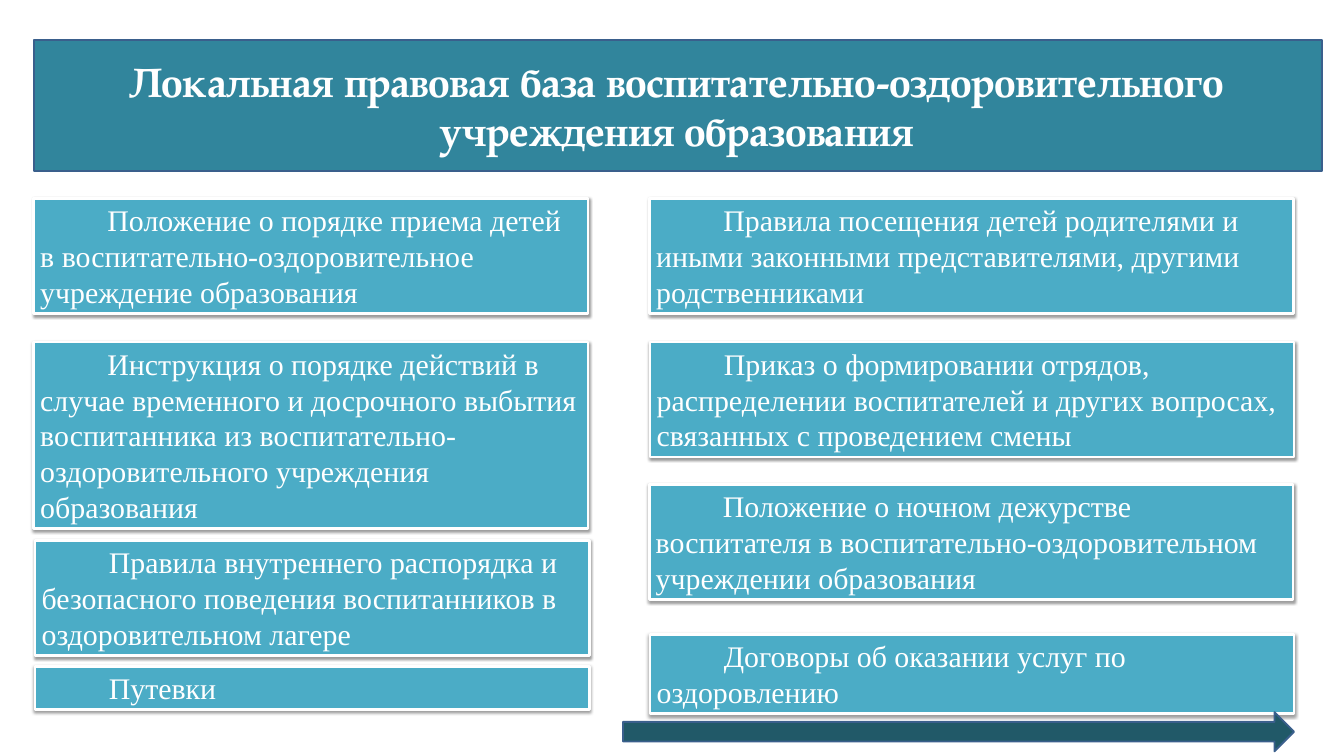
import pptx
import pptx.dml.color
import pptx.enum.shapes
import pptx.enum.text
import pptx.oxml
import pptx.oxml.ns
import pptx.util

Pt = pptx.util.Pt
SHAPES = pptx.enum.shapes.MSO_SHAPE
ALIGN = pptx.enum.text.PP_ALIGN
ANCHOR = pptx.enum.text.MSO_ANCHOR
FIT = pptx.enum.text.MSO_AUTO_SIZE

LEFT, RIGHT = 36, 696
LEFT_WIDTH, RIGHT_WIDTH = 594, 690
LINE, PAD = 38.4, 8  # text line pitch, spare height of a card
TAB = 72

TITLE = "Локальная правовая база воспитательно-оздоровительного учреждения образования"
# Each card: left, top, number of lines, text
LEFT_CARDS = [
    (LEFT, 213, 3, "Положение о порядке приема детей в воспитательно-оздоровительное "
                   "учреждение образования"),
    (LEFT, 366.5, 5, "Инструкция о порядке действий в случае временного и досрочного "
                     "выбытия воспитанника из воспитательно-оздоровительного учреждения "
                     "образования"),
    (LEFT + 1.5, 579, 3, "Правила внутреннего распорядка и безопасного поведения "
                         "воспитанников в оздоровительном лагере"),
    (LEFT + 1.5, 714, 1, "Путевки"),
]
RIGHT_CARDS = [
    (RIGHT, 213, 3, "Правила посещения детей родителями и иными законными "
                    "представителями, другими родственниками"),
    (RIGHT + 0.5, 366.5, 3, "Приказ о формировании отрядов, распределении воспитателей "
                            "и других вопросах, связанных с проведением смены"),
    (RIGHT - 0.5, 519, 3, "Положение о ночном дежурстве воспитателя в "
                          "воспитательно-оздоровительном учреждении образования"),
    (RIGHT + 0.5, 679.5, 2, "Договоры об оказании услуг по оздоровлению"),
]

TITLE_FONT = {"name": "TeX Gyre Pagella", "size": Pt(44), "bold": True}
CARD_FONT = {"name": "Times New Roman", "size": Pt(32), "bold": False}
TITLE_FRAME = {"word_wrap": True, "vertical_anchor": ANCHOR.MIDDLE}
CARD_FRAME = {"word_wrap": True, "vertical_anchor": ANCHOR.TOP,
              "auto_size": FIT.SHAPE_TO_FIT_TEXT}


def tint(hue):
    return pptx.dml.color.RGBColor.from_string(hue)


def apply(item, values):
    for name, value in values.items():
        setattr(item, name, value)


def draw(slide, kind, box, fill, edge, width):
    shape = slide.shapes.add_shape(kind, *(Pt(n) for n in box))
    shape.shadow.inherit = False
    shape.fill.solid()
    shape.fill.fore_color.rgb = tint(fill)
    shape.line.color.rgb = tint(edge)
    shape.line.width = Pt(width)
    return shape


def write(shape, text, frame, font, align):
    apply(shape.text_frame, frame)
    para = shape.text_frame.paragraphs[0]
    para.alignment = align
    run = para.add_run()
    run.text = text
    apply(run.font, font)
    run.font.color.rgb = tint("FFFFFF")
    return para


def stop(para):
    """Add a left tab stop to the paragraph."""
    props = para._p.get_or_add_pPr()
    props.append(pptx.oxml.parse_xml(
        f'<a:tabLst {pptx.oxml.ns.nsdecls("a")}>'
        f'<a:tab pos="{Pt(TAB)}" algn="l"/></a:tabLst>'))


def shade(shape):
    """Fill the empty effect list with a soft shadow below the shape."""
    effects = shape.element.spPr.find(pptx.oxml.ns.qn("a:effectLst"))
    effects.append(pptx.oxml.parse_xml(
        f'<a:outerShdw {pptx.oxml.ns.nsdecls("a")} blurRad="{Pt(3.1)}" '
        f'dist="{Pt(1.6)}" dir="5400000" rotWithShape="0">'
        '<a:srgbClr val="000000"><a:alpha val="38000"/></a:srgbClr></a:outerShdw>'))


def stack(slide, width, cards):
    for left, top, lines, text in cards:
        box = (left, top, width, lines * LINE + PAD)
        card = draw(slide, SHAPES.RECTANGLE, box, "4BACC6", "FFFFFF", 3)
        shade(card)
        stop(write(card, "\t" + text, CARD_FRAME, CARD_FONT, ALIGN.LEFT))


def main():
    deck = pptx.Presentation()
    apply(deck, {"slide_width": Pt(1440), "slide_height": Pt(810)})
    slide = deck.slides.add_slide(deck.slide_layouts[6])
    banner = draw(slide, SHAPES.RECTANGLE, (LEFT, 42.5, 1380, 140.5),
                  "31859C", "3A5F8C", 2)
    write(banner, TITLE, TITLE_FRAME, TITLE_FONT, ALIGN.CENTER)
    stack(slide, LEFT_WIDTH, LEFT_CARDS)
    stack(slide, RIGHT_WIDTH, RIGHT_CARDS)
    draw(slide, SHAPES.RIGHT_ARROW, (667.5, 763, 719, 42), "215968", "3A5F8C", 2)
    deck.save("out.pptx")


if __name__ == "__main__":
    main()
